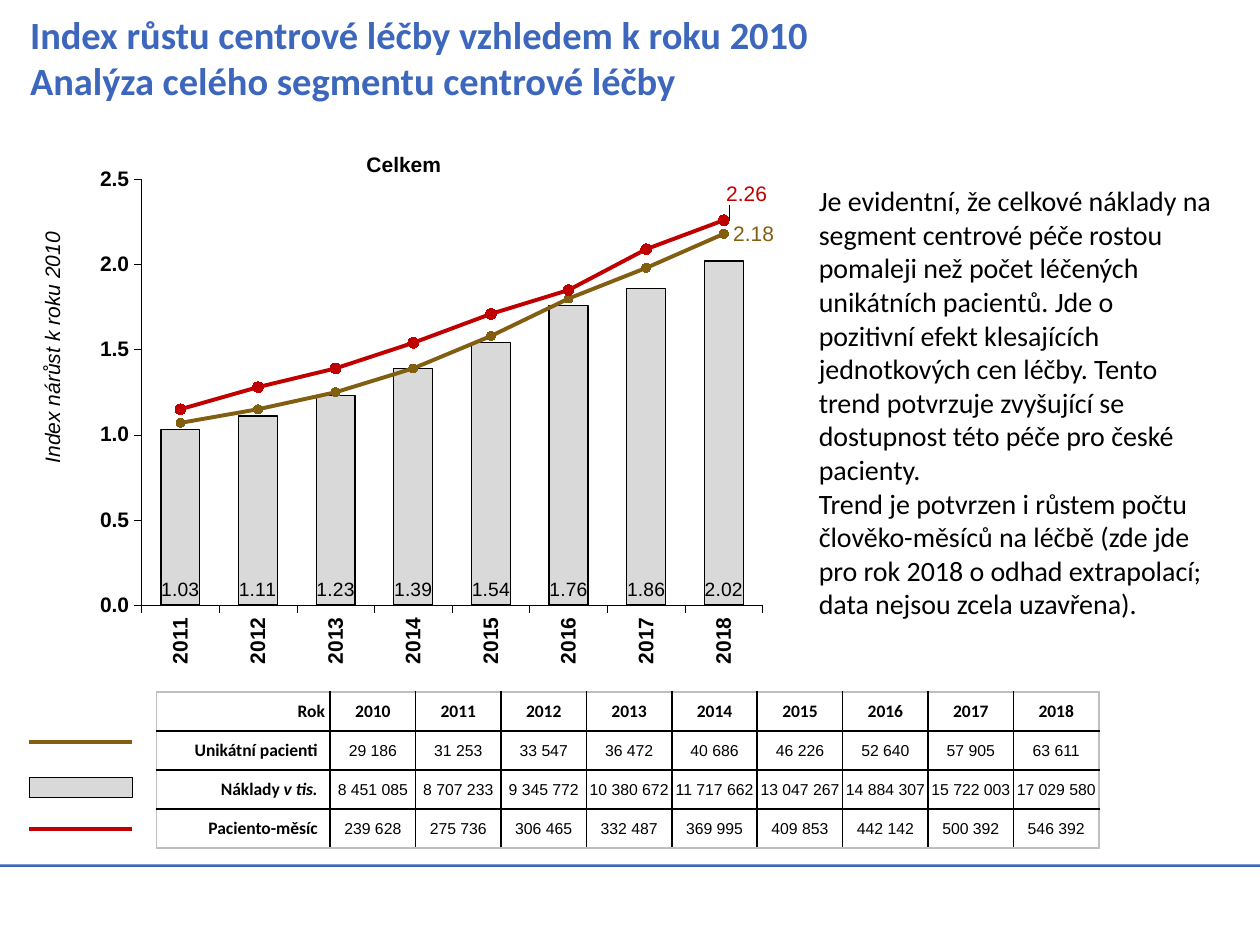
"""Slide on the growth index of centre-based treatment relative to 2010."""
from lxml.etree import SubElement
from pptx import Presentation
from pptx.chart.data import CategoryChartData
from pptx.dml.color import RGBColor
from pptx.enum.chart import XL_CHART_TYPE as CT, XL_LABEL_POSITION as LP
from pptx.enum.chart import XL_MARKER_STYLE as MS, XL_TICK_MARK as TM
from pptx.enum.shapes import MSO_CONNECTOR as MC, MSO_SHAPE as MSH
from pptx.enum.text import MSO_ANCHOR as MA, PP_ALIGN as AL
from pptx.oxml import parse_xml
from pptx.oxml.ns import nsdecls, qn
from pptx.util import Inches, Pt

C = {"blue": "3D67BC", "black": "000000", "bar": "D9D9D9", "patients": "825E10",
     "months": "C00000", "edge": "BFBFBF"}
RGB = {k: RGBColor.from_string(v) for k, v in C.items()}

prs = Presentation()
prs.slide_width, prs.slide_height = Inches(10), Inches(7.5)
s = prs.slides.add_slide(prs.slide_layouts[6])


def box(*shares):
    sides = (prs.slide_width, prs.slide_height) * 2
    return [int(side * share / 100) for side, share in zip(sides, shares)]


def style(font, color="black", **fmt):
    for key, value in fmt.items():
        setattr(font, key, value)
    font.color.rgb = RGB[color]


rects = [((0, 91.47, 100, 0.27), "blue", None), ((2.3, 82.27, 8.2, 2.13), "bar", 0.5)]
for place, color, width in rects:
    sp = s.shapes.add_shape(MSH.RECTANGLE, *box(*place))
    sp.shadow.inherit = False
    sp.fill.solid()
    sp.fill.fore_color.rgb = RGB[color]
    if width:
        sp.line.color.rgb, sp.line.width = RGB["black"], Pt(width)
    else:
        sp.line.fill.background()

for y, color in ((78.53, "patients"), (87.73, "months")):
    ln = s.shapes.add_connector(MC.STRAIGHT, *box(2.3, y, 10.5, y))
    ln.line.color.rgb, ln.line.width = RGB[color], Pt(2.25)
    SubElement(ln._element.spPr, qn("a:effectLst"))

series = [
    ("Náklady", "bar", [1.03, 1.11, 1.23, 1.39, 1.54, 1.76, 1.86, 2.02]),
    ("Unikátní pacienti", "patients", [1.07, 1.15, 1.25, 1.39, 1.58, 1.80, 1.98, 2.18]),
    ("Paciento-měsíc", "months", [1.15, 1.28, 1.39, 1.54, 1.71, 1.85, 2.09, 2.26]),
]
data = CategoryChartData(number_format="0.00")
data.categories = [str(year) for year in range(2011, 2019)]
for name, _, values in series:
    data.add_series(name, values)
ch = s.shapes.add_chart(CT.COLUMN_CLUSTERED, *box(-1.4, 10.8, 63.2, 68.27), data).chart
ch.has_legend = ch.has_title = False
style(ch.font, size=Pt(12), bold=True, name="Arial")

bars = ch.plots[0]
bars.gap_width, bars.vary_by_categories = 100, False
bar_xml = bars._element
line_xml = parse_xml(f'<c:lineChart {nsdecls("c")}><c:grouping val="standard"/>'
                     '<c:varyColors val="0"/></c:lineChart>')
for ser in bar_xml.findall(qn("c:ser"))[1:]:
    for flag in ser.findall(qn("c:invertIfNegative")):
        ser.remove(flag)
    line_xml.append(ser)
SubElement(line_xml, qn("c:marker")).set("val", "1")
for ax in bar_xml.findall(qn("c:axId")):
    SubElement(line_xml, qn("c:axId")).set("val", ax.get("val"))
bar_xml.addnext(line_xml)

area = bar_xml.getparent()
for old in area.findall(qn("c:layout")):
    area.remove(old)
area.insert(0, parse_xml(
    f'<c:layout {nsdecls("c")}><c:manualLayout><c:layoutTarget val="inner"/>'
    '<c:xMode val="edge"/><c:yMode val="edge"/><c:x val="0.2"/><c:y val="0.12"/>'
    '<c:w val="0.78"/><c:h val="0.66"/></c:manualLayout></c:layout>'))

cost = bars.series[0]
cost.format.fill.solid()
cost.format.fill.fore_color.rgb = RGB["bar"]
cost.format.line.color.rgb, cost.format.line.width = RGB["black"], Pt(0.75)
dl = cost.data_labels
dl.show_value, dl.position = True, LP.INSIDE_BASE
dl.number_format, dl.number_format_is_linked = "0.00", False
style(dl.font, size=Pt(11), bold=False, name="Arial")

for ser, (_, color, _), size in zip(ch.plots[1].series, series[1:], (5, 6)):
    ser.smooth = False
    ser.format.line.color.rgb, ser.format.line.width = RGB[color], Pt(2.25)
    ser.marker.style, ser.marker.size = MS.CIRCLE, size
    ser.marker.format.fill.solid()
    ser.marker.format.fill.fore_color.rgb = RGB[color]
    ser.marker.format.line.color.rgb = RGB[color]
    ser.data_labels.show_value = False
    label = ser.points[7].data_label
    style(label.font, color, size=Pt(12), bold=False, name="Arial")
    label.position = LP.RIGHT
ser._element.find(".//" + qn("c:dLbl")).insert(1, parse_xml(
    f'<c:layout {nsdecls("c")}><c:manualLayout><c:x val="-0.01"/><c:y val="-0.04"/>'
    '</c:manualLayout></c:layout>'))

cat, val = ch.category_axis, ch.value_axis
val.minimum_scale, val.maximum_scale, val.major_unit = 0, 2.5, 0.5
val.tick_labels.number_format, val.tick_labels.number_format_is_linked = "#,##0.0", False
for ax in (cat, val):
    ax.has_major_gridlines = False
    ax.major_tick_mark = TM.OUTSIDE
    ax.format.line.color.rgb, ax.format.line.width = RGB["black"], Pt(0.25)
    style(ax.tick_labels.font, size=Pt(12), bold=True, name="Arial")
cat._element.find(".//" + qn("a:bodyPr")).set("rot", "-5400000")

label_fmt = dict(size=Pt(12), name="Arial")
texts = [
    ((1.4, 1.2, 96.9, 9.6),
     ["Index růstu centrové léčby vzhledem k roku 2010\vAnalýza celého segmentu centrové léčby"],
     dict(size=Pt(22), name="Calibri", bold=True, color="blue"), AL.LEFT, MA.MIDDLE, None, 0),
    ((-7.5, 35.47, 23.2, 2.67), ["Index nárůst k roku 2010"],
     dict(label_fmt, italic=True), AL.CENTER, MA.MIDDLE, 0, 270),
    ((22.8, 16, 18.5, 2.67), ["Celkem"],
     dict(label_fmt, bold=True), AL.CENTER, MA.MIDDLE, 0, 0),
    ((64, 18.8, 33.4, 48),
     ["Je evidentní, že celkové náklady na segment centrové péče rostou pomaleji než počet "
      "léčených unikátních pacientů. Jde o pozitivní efekt klesajících jednotkových cen léčby. "
      "Tento trend potvrzuje zvyšující se dostupnost této péče pro české pacienty.",
      "Trend je potvrzen i růstem počtu člověko-měsíců na léčbě (zde jde pro rok 2018 o odhad "
      "extrapolací; data nejsou zcela uzavřena)."],
     dict(size=Pt(16), name="Calibri"), AL.LEFT, MA.TOP, None, 0),
]
for place, paras, fmt, align, anchor, inset, turn in texts:
    sp = s.shapes.add_textbox(*box(*place))
    sp.rotation = turn
    tf = sp.text_frame
    tf.word_wrap, tf.vertical_anchor = True, anchor
    if inset is not None:
        tf.margin_left = tf.margin_right = tf.margin_top = tf.margin_bottom = inset
    for i, text in enumerate(paras):
        p = tf.add_paragraph() if i else tf.paragraphs[0]
        p.text, p.alignment = text, align
        for r in p.runs:
            style(r.font, **fmt)

rows = [
    ["Rok "] + [str(year) for year in range(2010, 2019)],
    ["Unikátní pacienti", "29 186", "31 253", "33 547", "36 472", "40 686", "46 226",
     "52 640", "57 905", "63 611"],
    ["Náklady |v tis.", "8 451 085", "8 707 233", "9 345 772", "10 380 672", "11 717 662",
     "13 047 267", "14 884 307", "15 722 003", "17 029 580"],
    ["Paciento-měsíc", "239 628", "275 736", "306 465", "332 487", "369 995", "409 853",
     "442 142", "500 392", "546 392"],
]
n_rows, n_cols = len(rows), len(rows[0])
tb = s.shapes.add_table(n_rows, n_cols, *box(12.4, 73.2, 74.8, 16.53)).table
tb.first_row = tb.horz_banding = False
for j, col in enumerate(tb.columns):
    col.width = box(6.78 if j else 13.8)[0]
for i, row in enumerate(rows):
    for j, text in enumerate(row):
        cell = tb.cell(i, j)
        cell.vertical_anchor = MA.MIDDLE
        cell.fill.background()
        if (i == 0) == (j == 0):
            cell.margin_left = cell.margin_right = cell.margin_top = Inches(0.01)
            cell.margin_bottom = 0
        p = cell.text_frame.paragraphs[0]
        p.alignment = AL.CENTER if j else AL.RIGHT
        head = i == 0 or j == 0
        for k, part in enumerate(text.split("|")):
            r = p.add_run()
            r.text = part
            style(r.font, size=Pt(10 if head else 9), bold=head, italic=k > 0,
                  name="Calibri" if head else "Arial")
        outer = {"L": j == 0, "R": j == n_cols - 1, "T": i == 0, "B": i == n_rows - 1}
        for k, (side, edge) in enumerate(outer.items()):
            cell._tc.tcPr.insert(k, parse_xml(
                f'<a:ln{side} {nsdecls("a")} w="12700"><a:solidFill>'
                f'<a:srgbClr val="{C["edge" if edge else "black"]}"/>'
                f'</a:solidFill></a:ln{side}>'))

prs.save("out.pptx")
